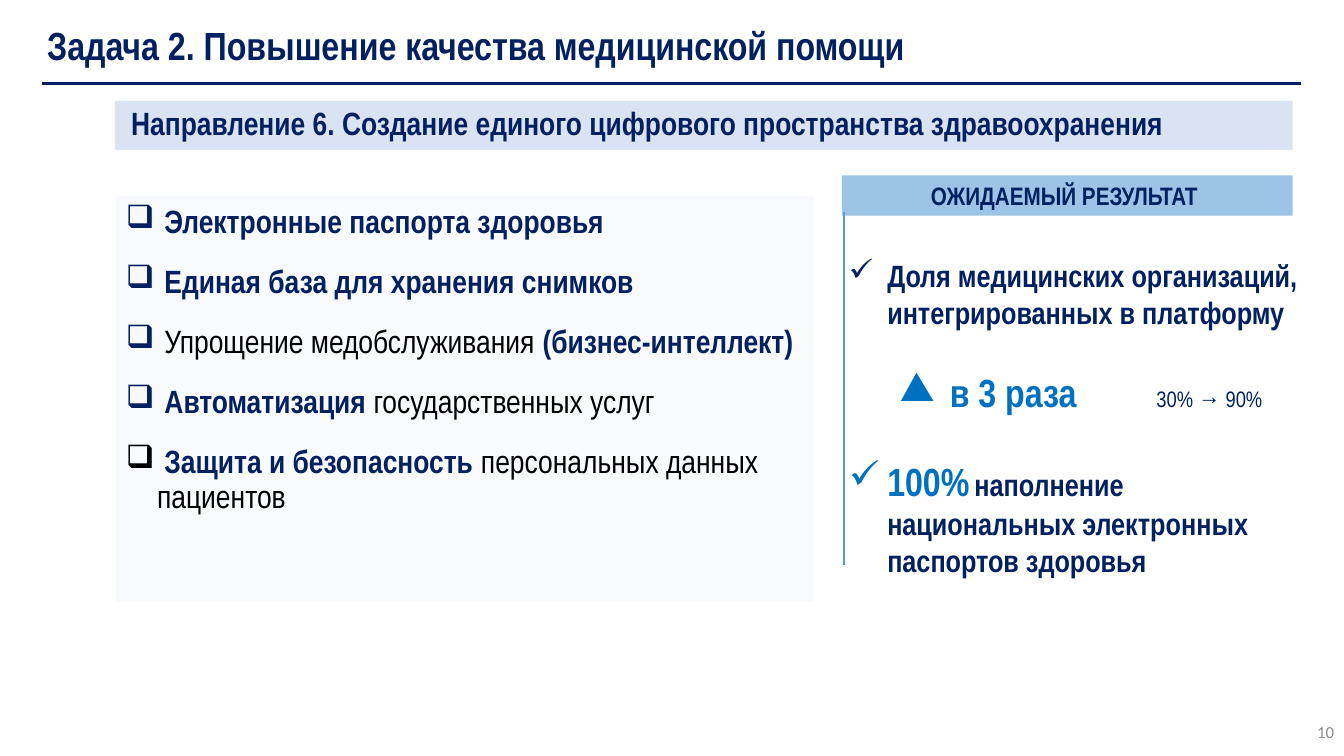
"""Builds the slide on the single digital space of health care."""
from lxml import etree
from pptx import Presentation
from pptx.dml.color import RGBColor
from pptx.enum.shapes import MSO_CONNECTOR, MSO_SHAPE
from pptx.enum.text import MSO_ANCHOR, PP_ALIGN
from pptx.oxml.ns import qn
from pptx.util import Inches, Pt

RECTANGLE = MSO_SHAPE.RECTANGLE
STRAIGHT = MSO_CONNECTOR.STRAIGHT
TOP, MIDDLE = MSO_ANCHOR.TOP, MSO_ANCHOR.MIDDLE
LEFT, CENTER, RIGHT = PP_ALIGN.LEFT, PP_ALIGN.CENTER, PP_ALIGN.RIGHT

NAVY = RGBColor(0x00, 0x20, 0x60)
BLUE = RGBColor(0x00, 0x70, 0xC0)
BLACK = RGBColor(0x00, 0x00, 0x00)
GREY = RGBColor(0x8C, 0x8C, 0x8C)
PALE_BLUE = RGBColor(0xDA, 0xE3, 0xF3)
PALEST_BLUE = RGBColor(0xF9, 0xFA, 0xFD)
SKY = RGBColor(0x9D, 0xC3, 0xE6)
RULE_BLUE = RGBColor(0x5B, 0x9B, 0xD5)

SLIDE_WIDTH, SLIDE_HEIGHT = 13.33, 7.5
MEASURES_LEFT, RESULT_LEFT, CONTENT_RIGHT = 1.14, 8.35, 12.82
RESULT_WIDTH = CONTENT_RIGHT - RESULT_LEFT
TITLE_RULE_Y = 0.83


def write(paragraph, text, size=23, color=NAVY, bold=True, font="Arial Narrow"):
    run = paragraph.add_run()
    run.text = text
    run.font.size = Pt(size)
    run.font.color.rgb = color
    run.font.bold = bold
    run.font.name = font


def add_bullet(paragraph, mark, color, margin, hang):
    properties = paragraph._p.get_or_add_pPr()
    properties.set("marL", str(Inches(margin)))
    properties.set("indent", str(-Inches(hang)))
    bullet_color = etree.SubElement(properties, qn("a:buClr"))
    etree.SubElement(bullet_color, qn("a:srgbClr"), val=str(color))
    etree.SubElement(properties, qn("a:buChar"), char=mark)


presentation = Presentation()
presentation.slide_width = Inches(SLIDE_WIDTH)
presentation.slide_height = Inches(SLIDE_HEIGHT)
slide = presentation.slides.add_slide(presentation.slide_layouts[6])

areas = [
    ((0.37, 0.03, 11.34, 0.82), None, (0.1, 0.05, 0.1, 0.05), MIDDLE, LEFT),
    ((12.74, 7.04, 0.59, 0.44), None, (0.1, 0.05, 0.1, 0.05), MIDDLE, RIGHT),
    ((MEASURES_LEFT, 1, CONTENT_RIGHT - MEASURES_LEFT, 0.49), PALE_BLUE,
     (0.16, 0.09, 0.16, 0.09), MIDDLE, LEFT),
    ((MEASURES_LEFT + 0.01, 1.94, 6.92, 4.03), PALEST_BLUE,
     (0.1, 0.1, 0.14, 0.16), TOP, LEFT),
    ((RESULT_LEFT, 1.74, RESULT_WIDTH, 0.4), SKY,
     (0.1, 0.05, 0.1, 0.05), MIDDLE, CENTER),
    ((RESULT_LEFT + 0.03, 2.5, RESULT_WIDTH + 0.05, 3.48), None,
     (0.04, 0.05, 0, 0.05), TOP, LEFT),
]
frames = []
for box, fill, insets, anchor, alignment in areas:
    lengths = [Inches(length) for length in box]
    if fill is None:
        area = slide.shapes.add_textbox(*lengths)
    else:
        area = slide.shapes.add_shape(RECTANGLE, *lengths)
        area.shadow.inherit = False
        area.fill.solid()
        area.fill.fore_color.rgb = fill
        area.line.fill.background()
    frame = area.text_frame
    frame.word_wrap = True
    frame.vertical_anchor = anchor
    frame.margin_left, frame.margin_top, frame.margin_right, frame.margin_bottom = map(Inches, insets)
    frame.paragraphs[0].alignment = alignment
    frames.append(frame)
title, page_number, direction, measures, result_heading, results = frames

write(title.paragraphs[0], "Задача 2. Повышение качества медицинской помощи", size=28)
write(page_number.paragraphs[0], "10", size=12, color=GREY, bold=False, font="Calibri")
write(direction.paragraphs[0],
      "Направление 6. Создание единого цифрового пространства здравоохранения")
direction.paragraphs[0].line_spacing = 0.9
write(result_heading.paragraphs[0], "ОЖИДАЕМЫЙ РЕЗУЛЬТАТ ", size=18)

measure_items = [
    (NAVY, [(" Электронные паспорта здоровья", True)]),
    (NAVY, [(" Единая база для хранения снимков", True)]),
    (NAVY, [(" Упрощение медобслуживания ", False), ("(бизнес-интеллект)", True)]),
    (NAVY, [(" Автоматизация ", True), ("государственных услуг", False)]),
    (BLACK, [(" Защита и безопасность ", True), ("персональных данных пациентов", False)]),
]
for index, (mark_color, parts) in enumerate(measure_items):
    measure = measures.add_paragraph() if index else measures.paragraphs[0]
    measure.alignment = LEFT
    measure.line_spacing = 0.9
    measure.space_after = Pt(18)
    add_bullet(measure, "❑", mark_color, 0.31, 0.31)
    for text, key_words in parts:
        write(measure, text, color=NAVY if key_words else BLACK, bold=key_words)

integration = results.paragraphs[0]
add_bullet(integration, "✓", NAVY, 0.38, 0.38)
write(integration, "Доля медицинских организаций, интегрированных в платформу", size=22)

growth = results.add_paragraph()
growth.space_before = Pt(27)
add_bullet(growth, "▲", BLUE, 1, 0.5)
tab_stops = etree.SubElement(growth._p.get_or_add_pPr(), qn("a:tabLst"))
etree.SubElement(tab_stops, qn("a:tab"), pos=str(Inches(3.05)), algn="l")
write(growth, "в 3 раза\t", size=28, color=BLUE)
write(growth, "30% → 90%", size=16, bold=False)

passports = results.add_paragraph()
passports.space_before = Pt(30)
add_bullet(passports, "✓", BLUE, 0.38, 0.38)
write(passports, "100%", size=28, color=BLUE)
write(passports, " ", size=16, bold=False)
write(passports, "наполнение национальных электронных паспортов здоровья", size=22)

rules = [
    ((0.42, TITLE_RULE_Y, 12.9, TITLE_RULE_Y), NAVY, 2.25),
    ((RESULT_LEFT + 0.02, 2.1, RESULT_LEFT + 0.02, 5.61), RULE_BLUE, 1.5),
]
for ends, color, weight in rules:
    rule = slide.shapes.add_connector(STRAIGHT, *[Inches(end) for end in ends])
    rule.line.color.rgb = color
    rule.line.width = Pt(weight)
    etree.SubElement(rule._element.spPr, qn("a:effectLst"))

presentation.save("out.pptx")
